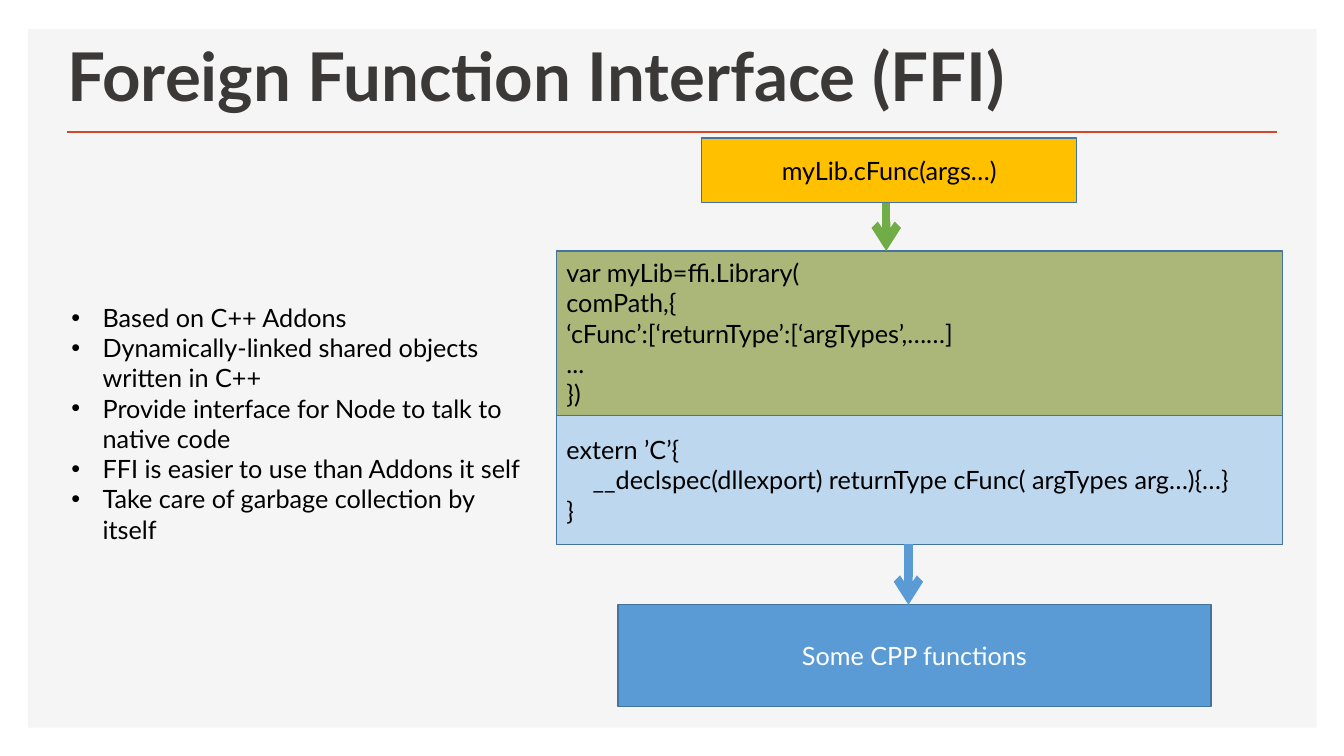
from dataclasses import dataclass

from lxml import etree
from pptx import Presentation
from pptx import util as u
from pptx.dml.color import RGBColor
from pptx.enum import shapes, text
from pptx.oxml.ns import qn


@dataclass(frozen=True)
class Theme:
    font: str = "Lato"
    title_size: int = 48
    body_size: int = 18
    rule_width: int = 2
    outline_width: int = 1
    arrow_width: int = 6
    panel: str = "F5F5F5"
    rule: str = "D24726"
    heading: str = "3B3838"
    ink: str = "000000"
    light_ink: str = "FFFFFF"
    outline: str = "43739E"
    call: str = "FFC000"
    binding: str = "ABB779"
    export: str = "BDD7EE"
    native: str = "5B9BD5"
    call_arrow: str = "70AD47"


THEME = Theme()
LEFT, CENTER = text.PP_ALIGN.LEFT, text.PP_ALIGN.CENTER
TOP, MIDDLE, BOTTOM = text.MSO_ANCHOR.TOP, text.MSO_ANCHOR.MIDDLE, text.MSO_ANCHOR.BOTTOM

BULLETS = [
    "Based on C++ Addons",
    "Dynamically-linked shared objects written in C++",
    "Provide interface for Node to talk to native code",
    "FFI is easier to use than Addons it self",
    "Take care of garbage collection by itself",
]
BINDING_CODE = [
    "var myLib=ffi.Library(",
    "comPath,{",
    "‘cFunc’:[‘returnType’:[‘argTypes’,……]",
    "...",
    "})",
]
EXPORT_CODE = [
    "extern ’C’{",
    "__declspec(dllexport) returnType cFunc( argTypes arg…){…}",
    "}",
]


def inches(*lengths):
    return [u.Inches(length) for length in lengths]


def apply(target, formats):
    for name, value in formats.items():
        setattr(target, name, value)


def write(shape, lines, color=THEME.ink, size=THEME.body_size, bold=False,
          align=LEFT, anchor=MIDDLE):
    frame = shape.text_frame
    apply(frame, {"text": "\n".join(lines), "word_wrap": True, "vertical_anchor": anchor})
    font_format = {"name": THEME.font, "size": u.Pt(size), "bold": bold}
    for paragraph in frame.paragraphs:
        paragraph.alignment = align
        for run in paragraph.runs:
            apply(run.font, font_format)
            run.font.color.rgb = RGBColor.from_string(color)
    return frame.paragraphs


def indent(paragraph, margin, first_line=0):
    properties = paragraph._p.get_or_add_pPr()
    properties.set("marL", str(u.Inches(margin)))
    properties.set("indent", str(u.Inches(first_line)))
    return properties


def add_box(slide, box, fill, outline=None):
    rectangle = slide.shapes.add_shape(shapes.MSO_SHAPE.RECTANGLE, *inches(*box))
    rectangle.shadow.inherit = False
    rectangle.fill.solid()
    rectangle.fill.fore_color.rgb = RGBColor.from_string(fill)
    if outline:
        rectangle.line.color.rgb = RGBColor.from_string(outline)
        rectangle.line.width = u.Pt(THEME.outline_width)
    else:
        rectangle.line.fill.background()
    return rectangle


def add_line(slide, start, end, color, width, arrow=False):
    line = slide.shapes.add_connector(
        shapes.MSO_CONNECTOR.STRAIGHT, *inches(*start, *end))
    line.line.color.rgb = RGBColor.from_string(color)
    line.line.width = u.Pt(width)
    if arrow:
        etree.SubElement(line.line._get_or_add_ln(), qn("a:tailEnd"), type="arrow")
    etree.SubElement(line._element.spPr, qn("a:effectLst"))


def add_header(slide, box):
    """Title with a rule below it, both inside the box."""
    left, top, width, height = box
    add_line(slide, (left, top + height), (left + width, top + height),
             THEME.rule, THEME.rule_width)
    title = slide.shapes.add_textbox(*inches(left - 0.09, top, 9.97, 0.7))
    write(title, ["Foreign Function Interface (FFI)"], THEME.heading,
          THEME.title_size, bold=True, anchor=BOTTOM)


def add_bullets(slide, box):
    bullet_list = slide.shapes.add_textbox(*inches(*box))
    for paragraph in write(bullet_list, BULLETS, anchor=TOP):
        properties = indent(paragraph, 0.31, -0.31)
        etree.SubElement(properties, qn("a:buFont"), typeface="Arial")
        etree.SubElement(properties, qn("a:buChar"), char="•")


def add_call_flow(slide, box):
    """Call, library binding with its export, and native code, from top to bottom."""
    left, top, width, height = box
    call_height, binding_height, export_height, native_height = 0.64, 1.63, 1.28, 1.01
    binding_top = top + 1.12
    export_top = binding_top + binding_height
    export_bottom = export_top + export_height
    native_top = top + height - native_height

    call = add_box(slide, (left + 1.44, top, 3.72, call_height), THEME.call, THEME.outline)
    write(call, ["myLib.cFunc(args…)"], align=CENTER)

    binding = add_box(slide, (left, binding_top, width, binding_height),
                      THEME.binding, THEME.outline)
    write(binding, BINDING_CODE)

    export = add_box(slide, (left, export_top, width, export_height),
                     THEME.export, THEME.outline)
    indent(write(export, EXPORT_CODE)[1], 0.26)

    native = add_box(slide, (left + 0.61, native_top, 5.88, native_height),
                     THEME.native, THEME.outline)
    write(native, ["Some CPP functions"], THEME.light_ink, align=CENTER)

    for x, start, end, color in (
        (left + 3.27, top + call_height, binding_top, THEME.call_arrow),
        (left + 3.49, export_bottom, native_top, THEME.native),
    ):
        add_line(slide, (x, start), (x, end), color, THEME.arrow_width, arrow=True)


def main():
    deck = Presentation()
    apply(deck, {"slide_width": u.Inches(13.33), "slide_height": u.Inches(7.5)})
    slide = deck.slides.add_slide(deck.slide_layouts[6])
    add_box(slide, (0.28, 0.29, 12.78, 6.93), THEME.panel)
    add_header(slide, (0.66, 0.49, 12.01, 0.82))
    add_call_flow(slide, (5.52, 1.37, 7.2, 5.64))
    add_bullets(slide, (0.61, 2.95, 4.7, 3.13))
    deck.save("out.pptx")


if __name__ == "__main__":
    main()
